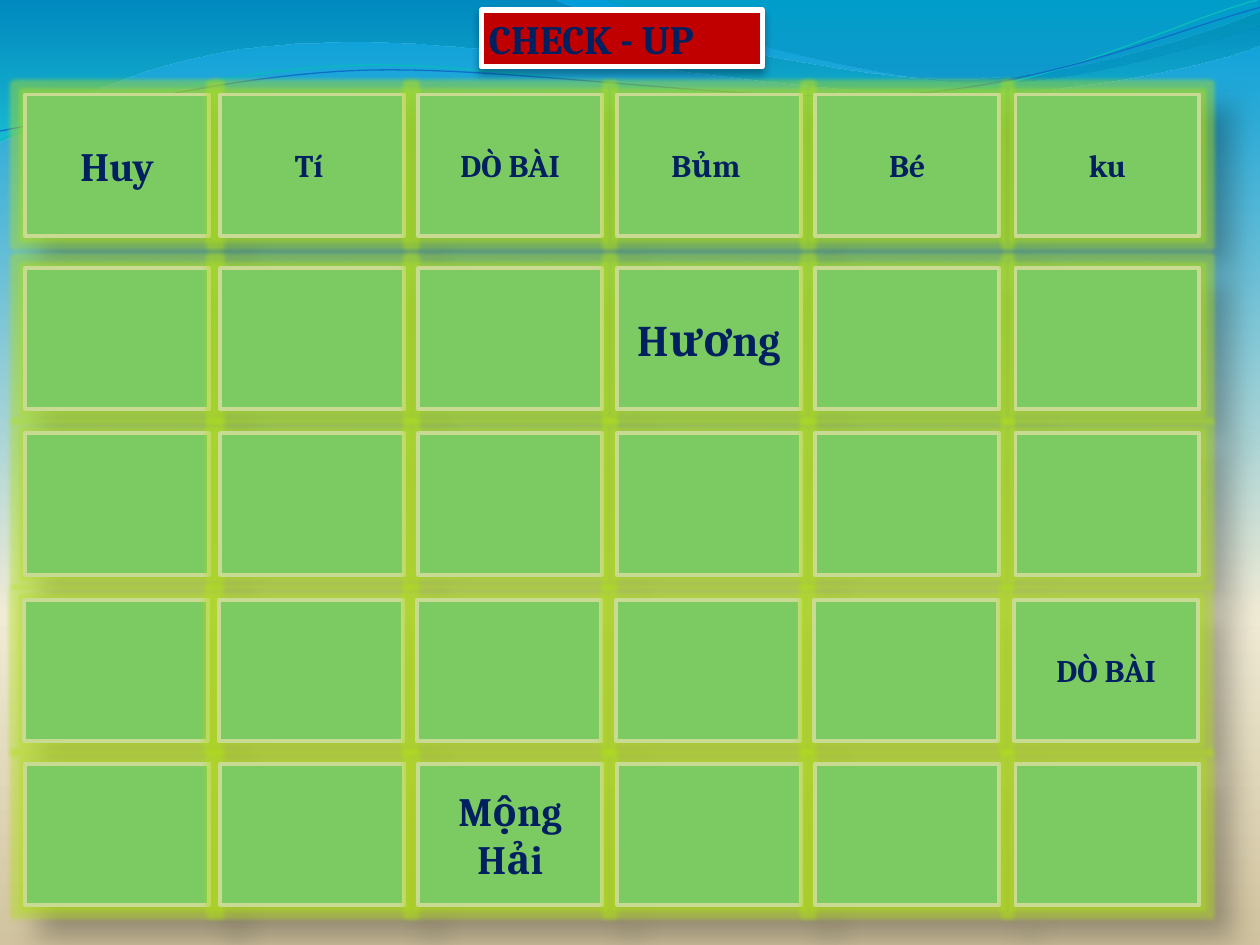
import pptx
import pptx.dml.color
import pptx.enum.shapes
import pptx.enum.text
import pptx.oxml
import pptx.oxml.ns
import pptx.util

WIDTH, HEIGHT = 10, 7.5
FONT = {"name": "Cambria", "bold": True}
NAVY = "002060"

COLUMN_LEFTS = [0.2, 1.75, 3.32, 4.9, 6.47, 8.06]
# (top, shift to the right)
ROWS = [(0.75, 0), (2.13, 0), (3.44, 0), (4.76, -0.01), (6.06, 0)]
CELL_WIDTH, CELL_HEIGHT = 1.46, 1.12
# (row, column): (name, text size)
NAMES = {
    (0, 0): ("Huy", 23), (0, 1): ("Tí ", 18), (0, 2): ("DÒ BÀI", 18),
    (0, 3): ("Bủm ", 18), (0, 4): ("Bé", 18), (0, 5): ("ku", 18),
    (1, 3): ("Hương", 25), (3, 5): ("DÒ BÀI", 18), (4, 2): ("Mộng Hải", 23),
}

# Each wave is a start point followed by segments: 2 numbers a line, 6 a curve.
FILLED_WAVES = [
    ([(0, 0), (4.4, 0), (4.76, 0.17, 6.64, 0.63, 7.58, 0.63),
      (8.53, 0.63, 9.58, 0.26, 10, 0.09), (10, 0.36),
      (9.83, 0.44, 8.7, 0.76, 7.46, 0.75), (6.22, 0.75, 3.82, 0.28, 2.57, 0.34),
      (1.29, 0.36, 0.46, 0.83, 0, 1.13)],
     [(0, "0074A1", 45), (100, "00C6CF", 55)]),
    ([(4.79, 0), (5.09, 0.11, 6.82, 0.62, 7.69, 0.65),
      (8.56, 0.69, 9.61, 0.32, 10, 0.21), (10, 0)],
     [(0, "00A1A9", 30), (80, "008BBF", 45)]),
]
LINE_WAVES = [
    ([(0, 1.11), (0.48, 0.93, 1.58, 0.57, 2.77, 0.52),
      (3.95, 0.47, 5.93, 0.89, 7.13, 0.8), (8.33, 0.71, 9.38, 0.15, 9.98, 0)],
     "0AB8BF", 0.85),
    ([(0, 1.04), (0.47, 0.96, 1.64, 0.61, 2.83, 0.56),
      (4.03, 0.51, 5.97, 0.84, 7.17, 0.75), (8.36, 0.67, 9.41, 0.21, 10, 0.06)],
     "0F6FC6", 0.75),
]


def color(value):
    return pptx.dml.color.RGBColor.from_string(value)


def assign(target, values):
    for name, value in values.items():
        setattr(target, name, value)


def inches(*values):
    return [pptx.util.Inches(value) for value in values]


def xml(text):
    return pptx.oxml.parse_xml(text.replace(">", f" {pptx.oxml.ns.nsdecls('a')}>", 1))


def color_xml(value, alpha):
    return f'<a:srgbClr val="{value}"><a:alpha val="{alpha * 1000}"/></a:srgbClr>'


def set_gradient(fill, parent, stops):
    """Fill from top to bottom with (position, colour, opacity) stops."""
    fill.solid()
    solid = parent.find(pptx.oxml.ns.qn("a:solidFill"))
    marks = "".join(f'<a:gs pos="{position * 1000}">{color_xml(value, alpha)}</a:gs>'
                    for position, value, alpha in stops)
    parent.replace(solid, xml(f'<a:gradFill><a:gsLst>{marks}</a:gsLst>'
                              '<a:lin ang="5400000" scaled="0"/></a:gradFill>'))


def set_effects(shape, shadow, glow=None):
    """Shadow is colour, opacity, blur, distance, angle; glow is colour, opacity, radius."""
    shape.shadow.inherit = False
    parts = ""
    if glow:
        value, alpha, radius = glow
        parts += f'<a:glow rad="{pptx.util.Pt(radius)}">{color_xml(value, alpha)}</a:glow>'
    value, alpha, blur, distance, angle = shadow
    parts += (f'<a:outerShdw blurRad="{pptx.util.Pt(blur)}" dist="{pptx.util.Pt(distance)}" '
              f'dir="{angle * 60000}" algn="tl" rotWithShape="0">'
              f'{color_xml(value, alpha)}</a:outerShdw>')
    effects = shape._element.spPr.find(pptx.oxml.ns.qn("a:effectLst"))
    effects.extend(list(xml(f"<a:effectLst>{parts}</a:effectLst>")))


def set_line(shape, value, width):
    shape.line.color.rgb = color(value)
    shape.line.width = pptx.util.Pt(width)


def paint(shape, fill, line, width):
    shape.fill.solid()
    shape.fill.fore_color.rgb = color(fill)
    set_line(shape, line, width)


def write(shape, text, size, align, frame_format):
    left, top = inches(0.06, 0.03)
    frame = shape.text_frame
    assign(frame, {"margin_left": left, "margin_right": left, "margin_top": top,
                   "margin_bottom": top, "word_wrap": True, **frame_format})
    para = frame.paragraphs[0]
    assign(para, {"alignment": align, "line_spacing": 1.0,
                  "space_before": pptx.util.Pt(0)})
    span = para.add_run()
    span.text = text
    assign(span.font, {**FONT, "size": pptx.util.Pt(size)})
    span.font.color.rgb = color(NAVY)


def add_wave(page, wave, closed):
    """Draw the outline through its end points, then bend the curved segments."""
    start, *ends = [inches(*segment[-2:]) for segment in wave]
    builder = page.shapes.build_freeform(*start)
    builder.add_line_segments(ends, close=closed)
    shape = builder.convert_to_shape()
    shape.shadow.inherit = False
    for segment, straight in zip(wave[1:], shape._element.xpath(".//a:lnTo")):
        if len(segment) == 6:
            numbers = inches(*segment)
            points = "".join(f'<a:pt x="{x - shape.left}" y="{y - shape.top}"/>'
                             for x, y in zip(numbers[::2], numbers[1::2]))
            straight.getparent().replace(
                straight, xml(f"<a:cubicBezTo>{points}</a:cubicBezTo>"))
    return shape


def add_backdrop(page):
    background = page.background.fill
    background.solid()
    holder = page._element.xpath("p:cSld/p:bg/p:bgPr")[0]
    set_gradient(background, holder,
                 [(0, "009DD9", 100), (65, "F0EBD5", 100), (100, "D1C39F", 100)])
    for wave, stops in FILLED_WAVES:
        shape = add_wave(page, wave, True)
        set_gradient(shape.fill, shape._element.spPr, stops)
        shape.line.fill.background()
    for wave, value, width in LINE_WAVES:
        shape = add_wave(page, wave, False)
        shape.fill.background()
        set_line(shape, value, width)


def add_cell(page, left, top, name):
    cell = page.shapes.add_shape(pptx.enum.shapes.MSO_SHAPE.RECTANGLE,
                                 *inches(left, top, CELL_WIDTH, CELL_HEIGHT))
    paint(cell, "7CCA62", "C9DA92", 2.25)
    set_effects(cell, ("000000", 30, 15, 18, 45), ("B2E01E", 45, 5))
    if name:
        write(cell, *name, pptx.enum.text.PP_ALIGN.CENTER,
              {"vertical_anchor": pptx.enum.text.MSO_ANCHOR.MIDDLE})


def add_name_grid(page):
    for row, (top, shift) in enumerate(ROWS):
        for column, left in enumerate(COLUMN_LEFTS):
            add_cell(page, left + shift, top, NAMES.get((row, column)))


def place_title(page, left, top, width, height):
    title = page.shapes.title
    page.shapes._spTree.append(title._element)
    box = inches(left, top, width, height)
    assign(title, dict(zip(("left", "top", "width", "height"), box)))
    paint(title, "C00000", "FFFFFF", 3)
    set_effects(title, ("00374C", 48, 4.5, 3, 90))
    write(title, "CHECK - UP", 23, pptx.enum.text.PP_ALIGN.LEFT,
          {"vertical_anchor": pptx.enum.text.MSO_ANCHOR.TOP,
           "auto_size": pptx.enum.text.MSO_AUTO_SIZE.NONE})


def main():
    deck = pptx.Presentation()
    deck.slide_width, deck.slide_height = inches(WIDTH, HEIGHT)
    page = deck.slides.add_slide(deck.slide_layouts[5])
    add_backdrop(page)
    add_name_grid(page)
    place_title(page, 3.82, 0.08, 2.23, 0.45)
    deck.save("out.pptx")


if __name__ == "__main__":
    main()
